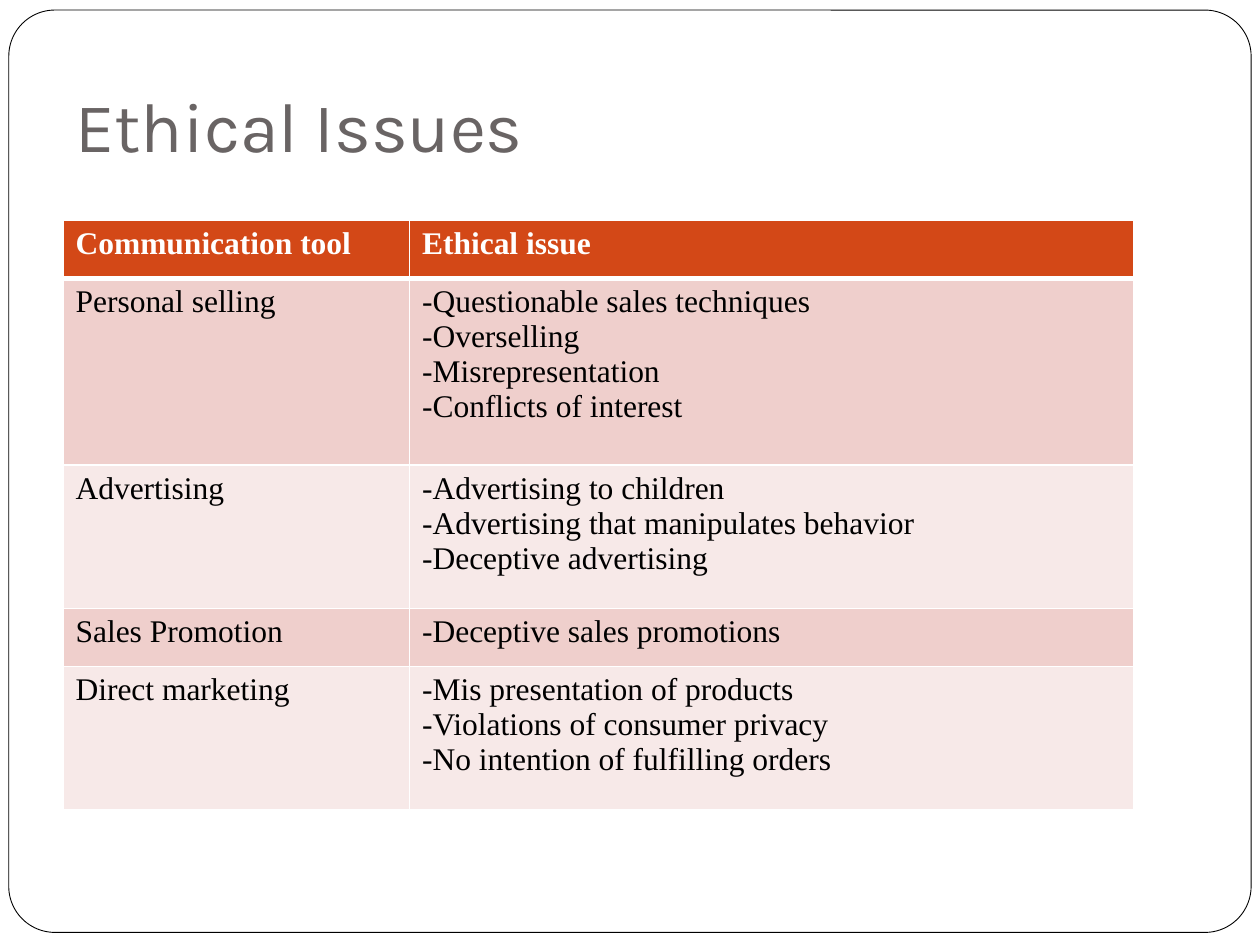
from pptx import Presentation
from pptx.dml.color import RGBColor
from pptx.enum.shapes import MSO_SHAPE
from pptx.enum.text import MSO_ANCHOR
from pptx.oxml import parse_xml
from pptx.oxml.ns import nsdecls
from pptx.util import Inches, Pt

COLORS = {
    "white": "FFFFFF",
    "black": "000000",
    "title": "696464",
    "header": "D34817",
    "odd": "EFCFCC",
    "even": "F7E9E8",
}
TABLE_ROWS = [
    ("Communication tool", ["Ethical issue"], 0.46),
    ("Personal selling", ["-Questionable sales techniques", "-Overselling",
                          "-Misrepresentation", "-Conflicts of interest"], 1.48),
    ("Advertising", ["-Advertising to children",
                     "-Advertising that manipulates behavior",
                     "-Deceptive advertising"], 1.14),
    ("Sales Promotion", ["-Deceptive sales promotions"], 0.46),
    ("Direct marketing", ["-Mis presentation of products",
                          "-Violations of consumer privacy",
                          "-No intention of fulfilling orders"], 1.14),
]
COLUMN_WIDTHS = (2.75, 5.75)


def rgb(name):
    return RGBColor.from_string(COLORS[name])


def write_text(frame, lines, font="Times New Roman", size=18, color="black", bold=False):
    for index, line in enumerate(lines):
        paragraph = frame.paragraphs[0] if index == 0 else frame.add_paragraph()
        run = paragraph.add_run()
        run.text = line
        run.font.name = font
        run.font.size = Pt(size)
        run.font.bold = bold
        run.font.color.rgb = rgb(color)


class SlideBuilder:
    """Draws styled elements on the current slide."""

    def __init__(self, slide):
        self.slide = slide

    def frame(self, left, top, width, height):
        border = self.slide.shapes.add_shape(
            MSO_SHAPE.ROUNDED_RECTANGLE,
            Inches(left), Inches(top), Inches(width), Inches(height))
        border.adjustments[0] = 0.05
        border.shadow.inherit = False
        border.fill.solid()
        border.fill.fore_color.rgb = rgb("white")
        border.line.color.rgb = rgb("black")
        border.line.width = Pt(0.5)

    def title(self, text, left, top, width, height):
        heading = self.slide.shapes.add_textbox(
            Inches(left), Inches(top), Inches(width), Inches(height)).text_frame
        heading.word_wrap = True
        heading.vertical_anchor = MSO_ANCHOR.BOTTOM
        heading.margin_bottom = Inches(0.1)
        write_text(heading, [text], font="Karla", size=40, color="title")

    def cell_borders(self, cell, top, bottom):
        properties = cell._tc.get_or_add_tcPr()
        widths = {"lnL": 1, "lnR": 1, "lnT": top, "lnB": bottom}
        for position, (side, points) in enumerate(widths.items()):
            properties.insert(position, parse_xml(
                f'<a:{side} {nsdecls("a")} w="{Pt(points)}"><a:solidFill>'
                f'<a:srgbClr val="{COLORS["white"]}"/></a:solidFill></a:{side}>'))

    def table(self, rows, left, top):
        grid = self.slide.shapes.add_table(
            len(rows), len(COLUMN_WIDTHS), Inches(left), Inches(top),
            Inches(sum(COLUMN_WIDTHS)), Inches(sum(row[2] for row in rows))).table
        for column, width in zip(grid.columns, COLUMN_WIDTHS):
            column.width = Inches(width)
        for number, (tool, issues, height) in enumerate(rows):
            grid.rows[number].height = Inches(height)
            is_header = number == 0
            fill = "header" if is_header else "odd" if number % 2 else "even"
            for cell, lines in zip(grid.rows[number].cells, ([tool], issues)):
                cell.fill.solid()
                cell.fill.fore_color.rgb = rgb(fill)
                self.cell_borders(cell, top=3 if number == 1 else 1,
                                  bottom=3 if is_header else 1)
                write_text(cell.text_frame, lines, bold=is_header,
                           color="white" if is_header else "black")


def main():
    presentation = Presentation()
    presentation.slide_width = Inches(10)
    presentation.slide_height = Inches(7.5)
    builder = SlideBuilder(presentation.slides.add_slide(presentation.slide_layouts[6]))
    builder.frame(0.07, 0.08, 9.86, 7.32)
    builder.title("Ethical Issues", 0.5, 0.17, 9, 1.25)
    builder.table(TABLE_ROWS, 0.5, 1.75)
    presentation.save("out.pptx")


if __name__ == "__main__":
    main()
